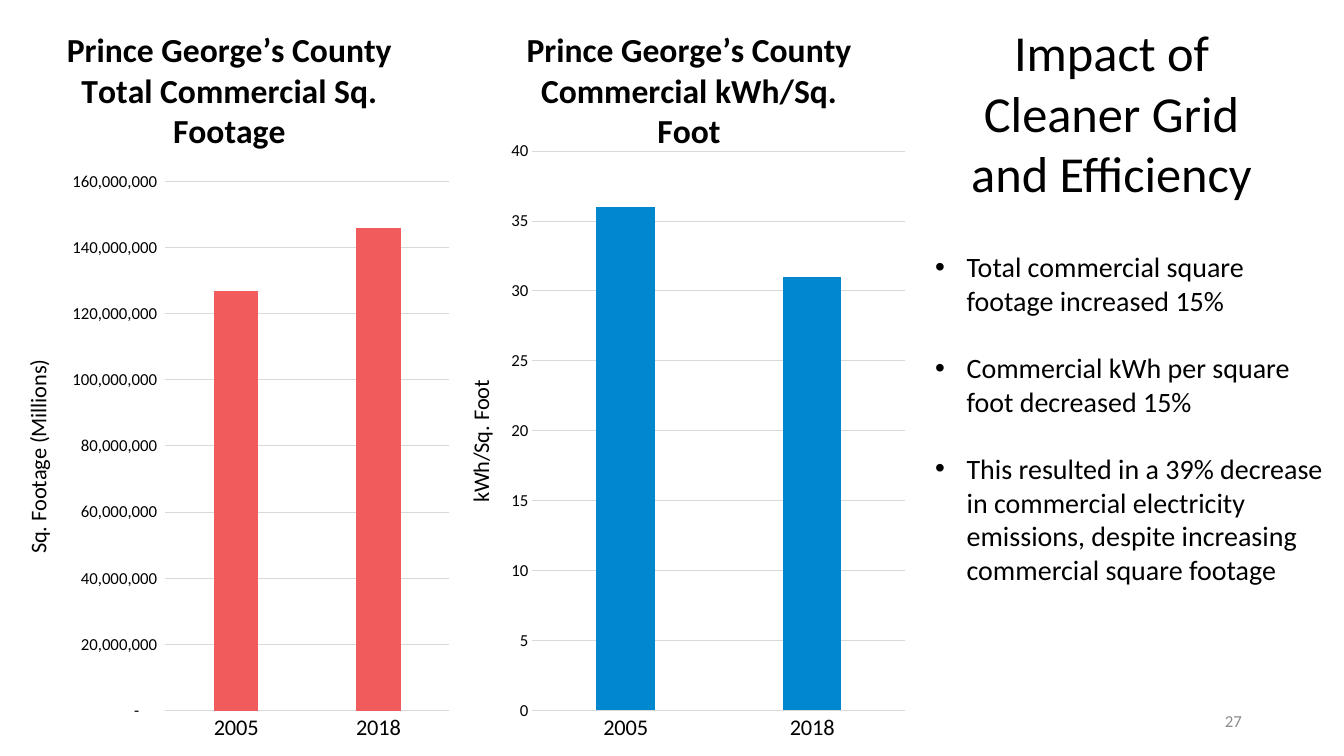
"""Build the slide on commercial floor space and electricity use in Prince George’s County."""
from dataclasses import dataclass

from lxml import etree
from pptx import Presentation
from pptx import util as u
from pptx.chart import data as chart_data
from pptx.dml import color
from pptx.enum import chart as chart_enum
from pptx.enum import text
from pptx.oxml import ns


@dataclass(frozen=True)
class Theme:
    """Font, colours and type sizes of the slide."""
    font: str = "Calibri"
    ink: str = "000000"
    muted: str = "8C8C8C"
    rule: str = "D9D9D9"
    coral: str = "F15B5B"
    blue: str = "0087CD"
    heading: int = 36
    chart_title: int = 24
    body: int = 20
    label: int = 16
    small: int = 12


THEME = Theme()


@dataclass(frozen=True)
class Frame:
    """Position and size in centimetres."""
    left: float
    top: float
    width: float
    height: float

    def lengths(self) -> list[u.Length]:
        """Return the four values as lengths."""
        return [u.Cm(value) for value in (self.left, self.top, self.width, self.height)]


@dataclass(frozen=True)
class BarPanel:
    """One column chart with its scale and the share of the frame its plot takes."""
    frame: Frame
    title: str
    axis_title: str
    values: tuple[float, float]
    fill: str
    maximum: float
    step: float
    number_format: str
    plot: tuple[float, float, float, float]


@dataclass(frozen=True)
class TextBlock:
    """One text box and the format of its paragraphs."""
    frame: Frame
    lines: tuple[str, ...]
    size: int
    ink: str = THEME.ink
    align: text.PP_ALIGN = text.PP_ALIGN.LEFT
    anchor: text.MSO_ANCHOR = text.MSO_ANCHOR.TOP
    bulleted: bool = False
    gap: int = 0


YEARS = ("2005", "2018")
PANELS = (
    BarPanel(Frame(11.56, 0, 11.61, 19.05), "Prince George’s County Commercial kWh/Sq. Foot",
             "kWh/Sq. Foot", (36, 31), THEME.blue, 40, 5, "General",
             (0.16, 0.2, 0.81, 0.74)),
    BarPanel(Frame(0, 0, 11.56, 19.05), "Prince George’s County Total Commercial Sq. Footage",
             "Sq. Footage (Millions)", (127_000_000, 146_000_000), THEME.coral,
             160_000_000, 20_000_000, '_(* #,##0_);_(* \\(#,##0\\);_(* "-"??_);_(@_)',
             (0.36, 0.24, 0.62, 0.7)),
)
BLOCKS = (
    TextBlock(Frame(23.32, 6.17, 10.54, 8.81),
              ("Total commercial square footage increased 15%",
               "Commercial kWh per square foot decreased 15%",
               "This resulted in a 39% decrease in commercial electricity emissions, "
               "despite increasing commercial square footage"),
              THEME.body, bulleted=True, gap=24),
    TextBlock(Frame(23.8, 0.41, 8.43, 4.88), ("Impact of Cleaner Grid and Efficiency",),
              THEME.heading, align=text.PP_ALIGN.CENTER),
    TextBlock(Frame(23.93, 17.65, 7.62, 1.02), ("27",), THEME.small, THEME.muted,
              text.PP_ALIGN.RIGHT, text.MSO_ANCHOR.MIDDLE),
)


def style_font(font, size: int, ink: str = THEME.ink, bold: bool = False) -> None:
    """Set typeface, size, colour and weight."""
    font.name, font.size, font.bold = THEME.font, u.Pt(size), bold
    font.color.rgb = color.RGBColor.from_string(ink)


def write(para, words: str, *, size: int, ink: str = THEME.ink, bold: bool = False) -> None:
    """Add one formatted span to a paragraph."""
    span = para.add_run()
    span.text = words
    style_font(span.font, size, ink, bold)


def add_bullet(para) -> None:
    """Give a paragraph a hanging round bullet."""
    indent = u.Cm(0.79)
    properties = para._p.get_or_add_pPr()
    properties.set("marL", str(indent))
    properties.set("indent", str(-indent))
    etree.SubElement(properties, ns.qn("a:buFont"), typeface="Arial")
    etree.SubElement(properties, ns.qn("a:buChar"), char="•")


def add_text(page, block: TextBlock) -> None:
    """Draw one text block."""
    box = page.shapes.add_textbox(*block.frame.lengths())
    frame = box.text_frame
    frame.word_wrap = True
    frame.vertical_anchor = block.anchor
    for index, line in enumerate(block.lines):
        para = frame.add_paragraph() if index else frame.paragraphs[0]
        if block.bulleted:
            add_bullet(para)
        para.alignment = block.align
        if index:
            para.space_before = u.Pt(block.gap)
        write(para, line, size=block.size, ink=block.ink)


def place_plot(chart, shares: tuple[float, float, float, float]) -> None:
    """Fix the inner plot area as shares of the chart frame."""
    area = chart._chartSpace.find(".//" + ns.qn("c:plotArea"))
    for old in area.findall(ns.qn("c:layout")):
        area.remove(old)
    layout = etree.Element(ns.qn("c:layout"))
    manual = etree.SubElement(layout, ns.qn("c:manualLayout"))
    settings = [("layoutTarget", "inner"), ("xMode", "edge"), ("yMode", "edge")]
    settings += zip("xywh", map(str, shares))
    for tag, value in settings:
        etree.SubElement(manual, ns.qn(f"c:{tag}"), val=value)
    area.insert(0, layout)


def style_axis(axis, size: int) -> None:
    """Set an axis's labels and remove its tick marks."""
    axis.major_tick_mark = axis.minor_tick_mark = chart_enum.XL_TICK_MARK.NONE
    style_font(axis.tick_labels.font, size)


def draw_rule(line) -> None:
    """Make a line thin and grey."""
    line.color.rgb = color.RGBColor.from_string(THEME.rule)
    line.width = u.Pt(0.75)


def add_panel(page, panel: BarPanel) -> None:
    """Draw one column chart."""
    data = chart_data.CategoryChartData()
    data.categories = YEARS
    data.add_series("Series 1", panel.values)
    chart = page.shapes.add_chart(chart_enum.XL_CHART_TYPE.COLUMN_CLUSTERED,
                                  *panel.frame.lengths(), data).chart
    style_font(chart.font, THEME.small)
    chart.has_legend = False
    chart.has_title = True
    chart.chart_title.include_in_layout = False
    write(chart.chart_title.text_frame.paragraphs[0], panel.title,
          size=THEME.chart_title, bold=True)
    place_plot(chart, panel.plot)

    plot = chart.plots[0]
    plot.vary_by_categories = False
    plot.gap_width, plot.overlap = 219, -27
    fill = plot.series[0].format.fill
    fill.solid()
    fill.fore_color.rgb = color.RGBColor.from_string(panel.fill)

    style_axis(chart.category_axis, THEME.label)
    draw_rule(chart.category_axis.format.line)
    scale = chart.value_axis
    style_axis(scale, THEME.small)
    scale.minimum_scale, scale.maximum_scale = 0, panel.maximum
    scale.major_unit = panel.step
    scale.format.line.fill.background()
    draw_rule(scale.major_gridlines.format.line)
    scale.tick_labels.number_format = panel.number_format
    scale.tick_labels.number_format_is_linked = False
    caption = scale.axis_title.text_frame
    caption._txBody.find(ns.qn("a:bodyPr")).set("rot", "-5400000")
    write(caption.paragraphs[0], panel.axis_title, size=THEME.label)


def main() -> None:
    """Build and save the deck."""
    deck = Presentation()
    deck.slide_width, deck.slide_height = u.Cm(33.87), u.Cm(19.05)
    page = deck.slides.add_slide(deck.slide_layouts[6])
    for panel in PANELS:
        add_panel(page, panel)
    for block in BLOCKS:
        add_text(page, block)
    deck.save("out.pptx")


if __name__ == "__main__":
    main()
